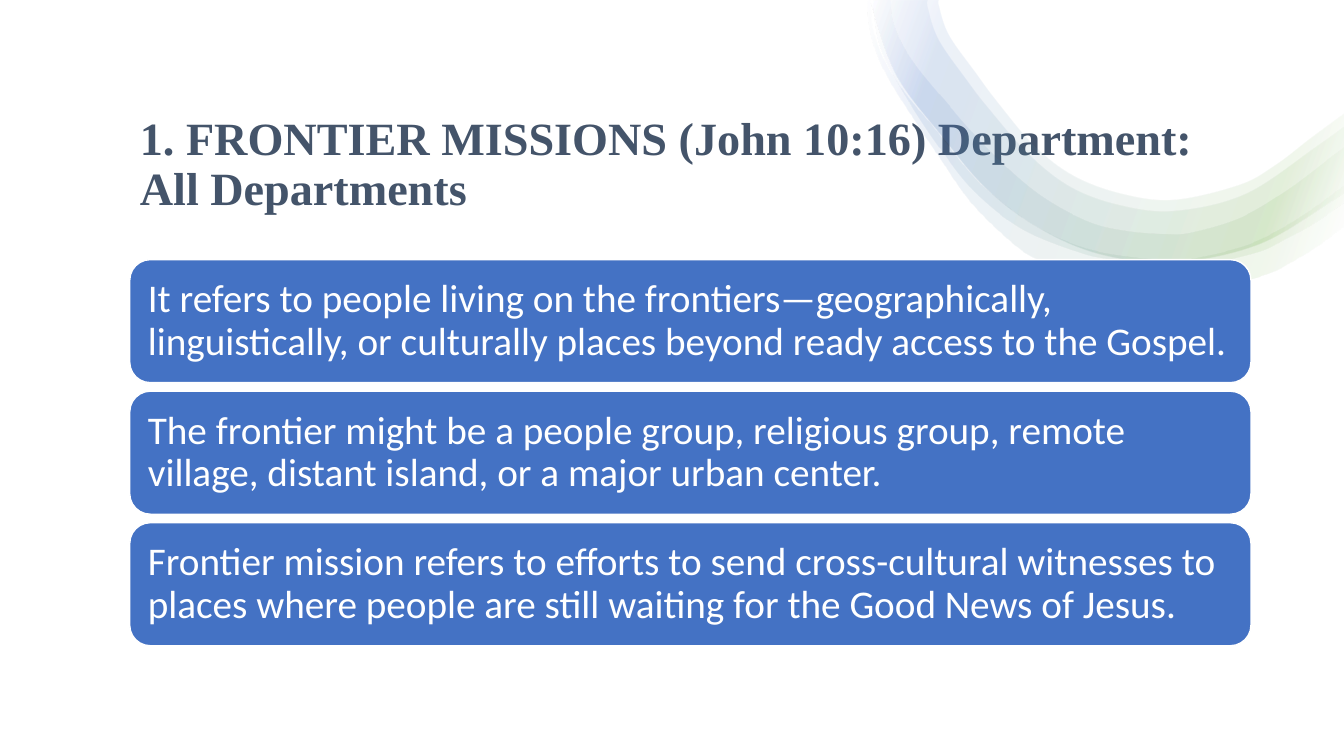
from lxml import etree
from pptx import Presentation
from pptx import util as u
from pptx.dml import color
from pptx.enum import shapes, text
from pptx.oxml import ns

COLS, ROWS = 133.3, 75
LEFT = 12.87
CARD_TOP, CARD_W, CARD_H, CARD_PITCH = 25.76, 111.2, 12.2, 13.05
GRADIENT = [(2, "FFFFFF"), (16, "70AD47"), (85, "4472C4"), (100, "FFFFFF")]

CARDS = [
    "It refers to people living on the frontiers—geographically, linguistically, "
    "or culturally places beyond ready access to the Gospel.",
    "The frontier might be a people group, religious group, remote village, "
    "distant island, or a major urban center.",
    "Frontier mission refers to efforts to send cross-cultural witnesses to "
    "places where people are still waiting for the Good News of Jesus.",
]

BROAD_EDGE = [
    (133.3, 19), (131.9, 20), (124.8, 24.2), (116.4, 26), (109.1, 25.2), (103, 22.6),
    (97.8, 18.7), (93.4, 13.5), (88.9, 7.5), (86.5, 0.8), (86.5, 0),
]
RIBBONS = [
    ([(86.4, 0), (86.6, 2.7), (87.5, 5.4), (88.9, 7.9), (90.6, 10.2), (92.5, 12.4),
      (94.3, 14.7), (96.1, 16.9), (98.1, 18.9), (102.5, 22.2), (107.6, 24.5),
      (113, 25.5), (116.6, 25.6), (118.6, 25.5), (123.9, 24.1), (128.8, 21.5),
      (133.3, 18.3)],
     [(133.3, 22.3), (130.8, 24.2), (128.2, 25.8), (125.3, 27.2), (119.1, 28.8),
      (115.8, 28.9), (112.7, 28.7), (109.6, 28.2), (106.5, 27.3), (103.6, 26),
      (100.9, 24.4), (96.5, 20.2), (93.1, 15.4), (89.9, 10.6), (88.4, 8.2),
      (87.1, 5.6), (86.3, 2.8), (86, 0)]),
    ([(88.3, 0), (88.5, 2), (89.4, 4.3), (90.8, 6.5), (92.4, 8.5), (94.2, 10.6),
      (96, 12.7), (99.6, 16.4), (103.5, 19.6), (108, 22), (111.8, 22.9),
      (115.7, 23.2), (118.3, 23), (123.1, 21.5), (127.5, 18.9), (131.8, 15.7),
      (133.3, 14.6)],
     [(133.3, 20.1), (130, 22.3), (127.4, 23.7), (124.7, 25), (118.7, 26.4),
      (116, 26.5), (112.7, 26.2), (109.8, 25.7), (106.9, 25), (101.3, 22.7),
      (96.6, 19), (93.1, 14.6), (90.1, 10.1), (88, 6.4), (87, 3.8), (86.5, 0)]),
    ([(92, 0), (92, 0.8), (93.1, 4), (95.9, 8), (97.9, 10.6), (101.9, 15.2),
      (106.1, 18.5), (110.9, 20.3), (116.4, 20.9), (123.5, 19.2), (130.5, 14.5),
      (133.3, 12.5)], BROAD_EDGE),
    ([(93.1, 0), (93.1, 0.6), (94.1, 3.5), (96.8, 7.3), (98.8, 10), (102.5, 14.4),
      (106.4, 17.4), (111.2, 19.2), (116.4, 19.8), (122.9, 18.3), (126.5, 16.3),
      (129.9, 13.7), (133.3, 11.2)], BROAD_EDGE),
]


def rgb(value):
    return color.RGBColor.from_string(value)


def write(tf, content, font="Calibri", size=28, fill="FFFFFF", bold=False,
          anchor=text.MSO_ANCHOR.MIDDLE, inset=None):
    tf.word_wrap = True
    tf.auto_size = text.MSO_AUTO_SIZE.NONE
    tf.vertical_anchor = anchor
    if inset is not None:
        tf.margin_left = tf.margin_right = tf.margin_top = tf.margin_bottom = inset
    p = tf.paragraphs[0]
    p.alignment = text.PP_ALIGN.LEFT
    p.line_spacing = 0.9
    r = p.add_run()
    r.text = content
    r.font.name, r.font.size, r.font.bold = font, u.Pt(size), bold
    r.font.color.rgb = rgb(fill)


def curve_edge(nodes):
    knots = [(int(n[0].get("x")), int(n[0].get("y"))) for n in nodes]
    padded = [knots[0], *knots, knots[-1]]
    for node, a, b, c, d in zip(nodes[1:], padded, padded[1:], padded[2:], padded[3:]):
        curve = etree.Element(ns.qn("a:cubicBezTo"))
        leave = [q + (s - o) / 6 for o, q, s in zip(a, b, c)]
        arrive = [s - (v - q) / 6 for q, s, v in zip(b, c, d)]
        for x, y in (leave, arrive, c):
            etree.SubElement(curve, ns.qn("a:pt"), x=str(round(x)), y=str(round(y)))
        node.getparent().replace(node, curve)


class Deck:
    def __init__(self):
        self.prs = Presentation()
        self.prs.slide_width, self.prs.slide_height = u.Inches(13.33), u.Inches(7.5)
        self.col = self.prs.slide_width / COLS
        self.row = self.prs.slide_height / ROWS
        self.slide = self.prs.slides.add_slide(self.prs.slide_layouts[5])

    def point(self, x, y):
        return round(x * self.col), round(y * self.row)

    def title(self, content, x, y, w, h):
        sp = self.slide.shapes.title
        sp.left, sp.top = self.point(x, y)
        sp.width, sp.height = self.point(w, h)
        write(sp.text_frame, content, font="Times New Roman", size=33, fill="44546A",
              bold=True, anchor=text.MSO_ANCHOR.BOTTOM)

    def block(self, kind, fill, x, y, w, h):
        sp = self.slide.shapes.add_shape(kind, *self.point(x, y), *self.point(w, h))
        sp.shadow.inherit = False
        sp.fill.solid()
        sp.fill.fore_color.rgb = rgb(fill)
        sp.line.fill.background()
        return sp

    def backdrop(self, fill):
        sp = self.block(shapes.MSO_SHAPE.RECTANGLE, fill, 0, 0, COLS, ROWS)
        self.slide.shapes.title._element.addprevious(sp._element)

    def ribbon(self, inner, outer):
        points = [self.point(x, y) for x, y in inner + outer]
        builder = self.slide.shapes.build_freeform(*points[0])
        builder.add_line_segments(points[1:], close=True)
        sp = builder.convert_to_shape()
        nodes = list(sp._element.spPr.find(".//" + ns.qn("a:path")))
        curve_edge(nodes[:len(inner)])
        curve_edge(nodes[len(inner):len(points)])
        sp.shadow.inherit = False
        sp.line.fill.background()
        sp.fill.gradient()
        sp.fill.gradient_angle = 160
        stops = sp._element.spPr.find(".//" + ns.qn("a:gsLst"))
        for stop in list(stops):
            stops.remove(stop)
        for pos, value in GRADIENT:
            stop = etree.SubElement(stops, ns.qn("a:gs"), pos=str(pos * 1000))
            clr = etree.SubElement(stop, ns.qn("a:srgbClr"), val=value)
            etree.SubElement(clr, ns.qn("a:alpha"), val="10000")

    def card(self, content, x, y, w, h):
        sp = self.block(shapes.MSO_SHAPE.ROUNDED_RECTANGLE, "4472C4", x, y, w, h)
        sp.line.color.rgb = rgb("FFFFFF")
        sp.line.width = u.Pt(1)
        write(sp.text_frame, content, inset=u.Inches(0.12))


def main():
    deck = Deck()
    deck.backdrop("FFFFFF")
    deck.title("1. FRONTIER MISSIONS (John 10:16) Department: All Departments",
               LEFT, 9.44, 107.5, 12.4)
    for inner, outer in RIBBONS:
        deck.ribbon(inner, outer)
    for i, content in enumerate(CARDS):
        deck.card(content, LEFT, CARD_TOP + i * CARD_PITCH, CARD_W, CARD_H)
    deck.prs.save("out.pptx")


if __name__ == "__main__":
    main()
